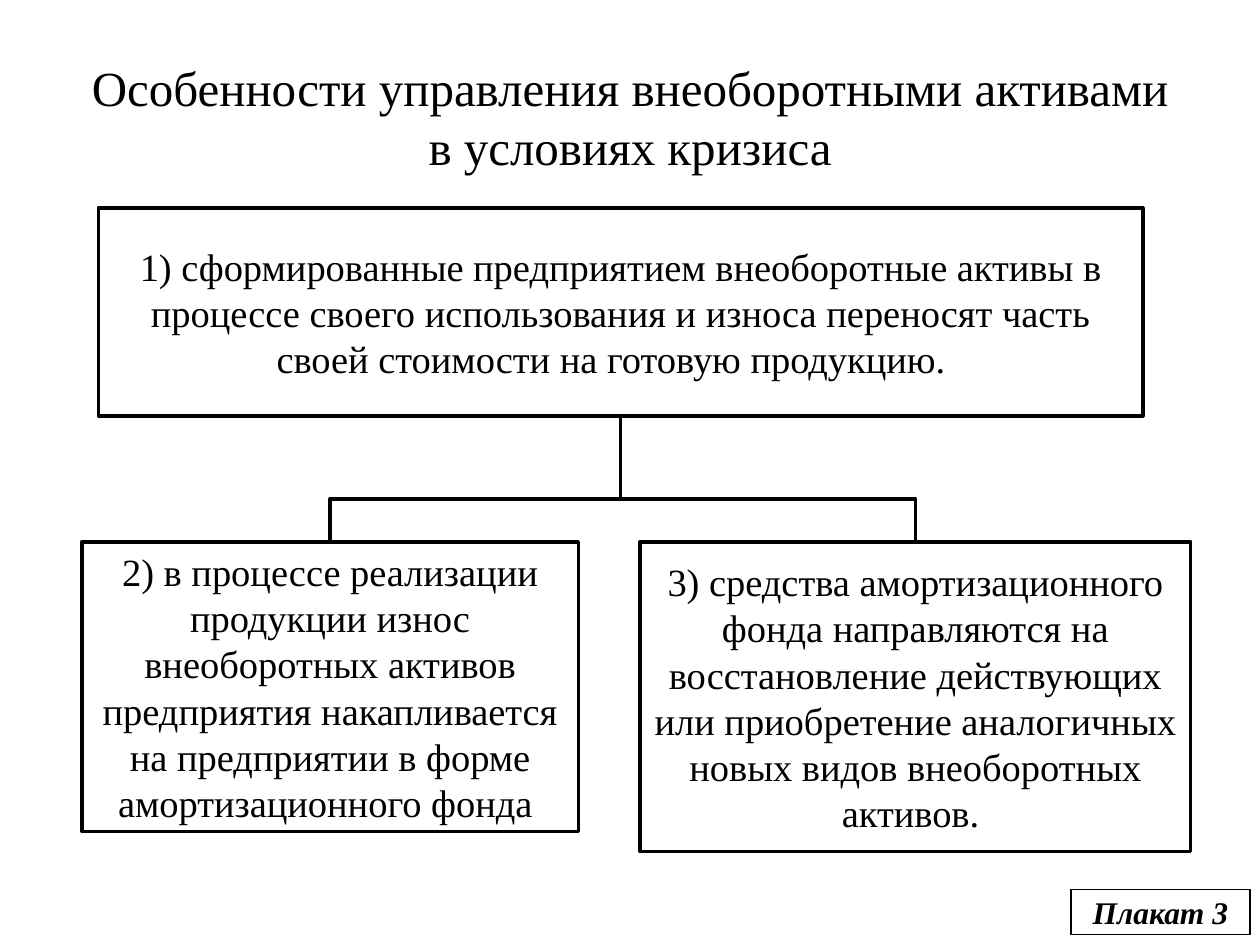
from pptx import Presentation
from pptx.dml.color import RGBColor
from pptx.enum.shapes import MSO_SHAPE
from pptx.enum.text import MSO_ANCHOR, PP_ALIGN
from pptx.util import Inches, Pt

RECTANGLE = MSO_SHAPE.RECTANGLE
MIDDLE = MSO_ANCHOR.MIDDLE
CENTER = PP_ALIGN.CENTER
TITLE_ONLY = 5
FONT = "Times New Roman"
BLACK, WHITE = "000000", "FFFFFF"


def color(target, value):
    """Give a font or a solid fill its colour."""
    target.rgb = RGBColor.from_string(value)


def write(shape, text, size, bold=False, italic=False, inset=None, wrap=True):
    """Put centred text in a shape."""
    frame = shape.text_frame
    frame.word_wrap = wrap
    frame.vertical_anchor = MIDDLE
    if inset is not None:
        frame.margin_left = frame.margin_right = Inches(inset)
        frame.margin_top = frame.margin_bottom = Inches(inset)
    para = frame.paragraphs[0]
    para.alignment = CENTER
    span = para.add_run()
    span.text = text
    span.font.name = FONT
    span.font.size = Pt(size)
    span.font.bold = bold
    span.font.italic = italic
    color(span.font.color, BLACK)


deck = Presentation()
deck.slide_width, deck.slide_height = Inches(10), Inches(7.5)
page = deck.slides.add_slide(deck.slide_layouts[TITLE_ONLY])

# Title
title = page.shapes.title
title.left, title.top = Inches(0.5), Inches(0.3)
title.width, title.height = Inches(9), Inches(1.25)
write(title, "Особенности управления внеоборотными активами в условиях кризиса", 28)

# Tree: the parent box and its two children (left, top, width, height)
parent = (0.78, 1.65, 8.29, 1.65)
children = [(0.65, 4.3, 3.94, 2.3), (5.08, 4.3, 4.37, 2.46)]
texts = [
    "1) сформированные предприятием внеоборотные активы в процессе своего "
    "использования и износа переносят часть своей стоимости на готовую продукцию.  ",
    "2) в процессе реализации продукции износ внеоборотных активов предприятия "
    "накапливается на предприятии в форме амортизационного фонда ",
    "3) средства амортизационного фонда направляются на восстановление действующих "
    "или приобретение аналогичных новых видов внеоборотных активов. ",
]

# Branches from the parent's bottom centre to each child's top centre
trunk = parent[0] + parent[2] / 2
start = parent[1] + parent[3]
bend = 3.96
for left, top, width, height in children:
    middle = left + width / 2
    points = [(trunk, bend), (middle, bend), (middle, top)]
    outline = page.shapes.build_freeform(Inches(trunk), Inches(start))
    outline.add_line_segments([(Inches(x), Inches(y)) for x, y in points], close=False)
    branch = outline.convert_to_shape()
    branch.shadow.inherit = False
    branch.fill.background()
    branch.line.width = Pt(2)
    color(branch.line.color, BLACK)

# Boxes of the tree, then the poster number in the corner
tree_style = {"size": 22, "inset": 0.02}
label_style = {"size": 18, "bold": True, "italic": True, "wrap": False}
boxes = [(place, text, 2, tree_style) for place, text in zip([parent, *children], texts)]
boxes.append(((8.5, 7.06, 1.42, 0.36), "Плакат 3", 0.75, label_style))
for place, text, line_width, style in boxes:
    box = page.shapes.add_shape(RECTANGLE, *map(Inches, place))
    box.shadow.inherit = False
    box.fill.solid()
    color(box.fill.fore_color, WHITE)
    box.line.width = Pt(line_width)
    color(box.line.color, BLACK)
    write(box, text, **style)

deck.save("out.pptx")
